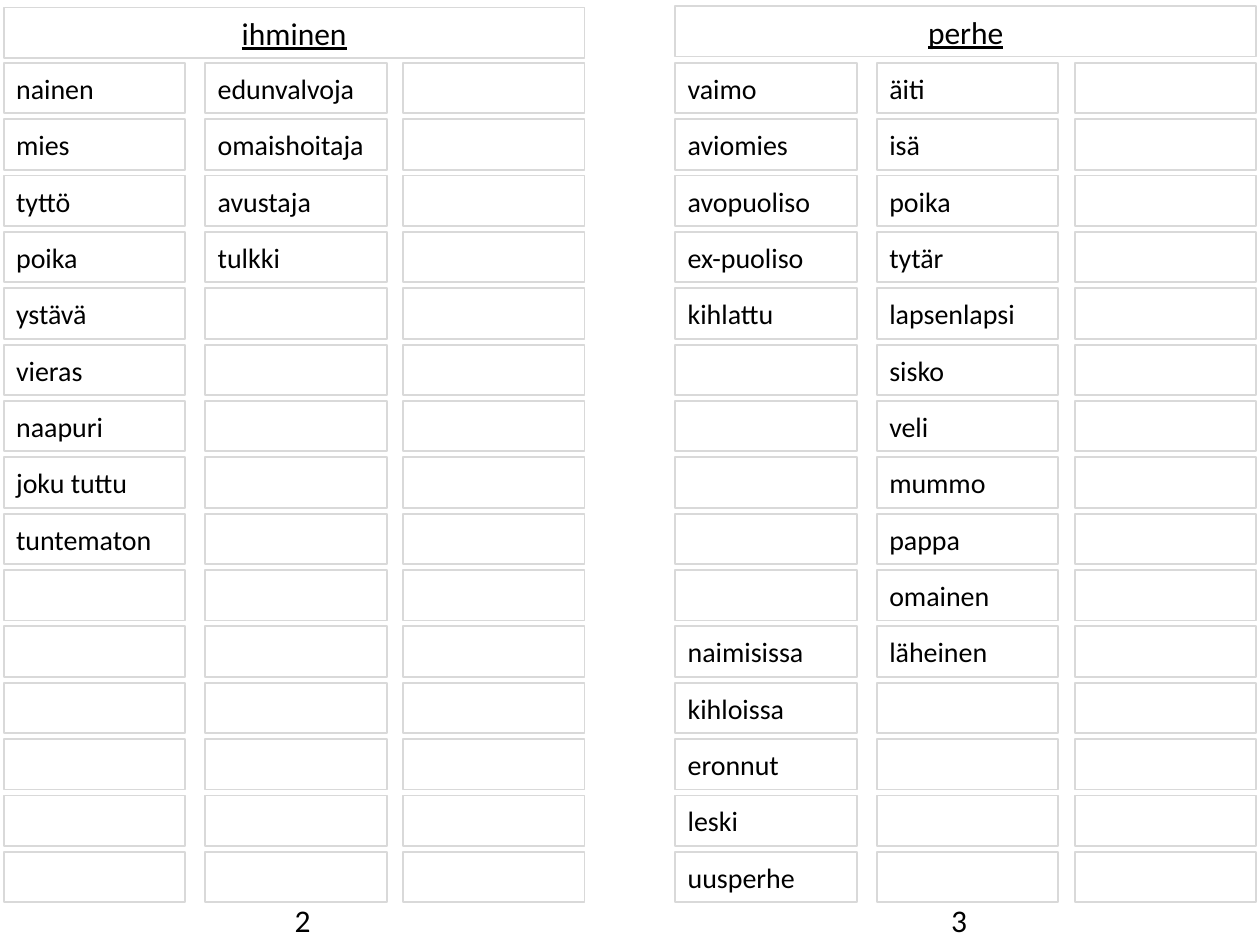
from pptx import Presentation
from pptx import util as u
from pptx.dml.color import RGBColor
from pptx.enum import shapes, text

LISTS = [
    {
        "heading": "ihminen", "page": "2", "left": 0.03, "top": 0.06,
        "page_left": 2.24, "page_width": 0.34,
        "columns": [
            ["nainen", "mies", "tyttö", "poika", "ystävä", "vieras",
             "naapuri", "joku tuttu", "tuntematon"],
            ["edunvalvoja", "omaishoitaja", "avustaja", "tulkki"],
            [],
        ],
    },
    {
        "heading": "perhe", "page": "3", "left": 5.36, "top": 0.05,
        "page_left": 7.45, "page_width": 0.43,
        "columns": [
            ["vaimo", "aviomies", "avopuoliso", "ex-puoliso", "kihlattu",
             "", "", "", "", "",
             "naimisissa", "kihloissa", "eronnut", "leski", "uusperhe"],
            ["äiti", "isä", "poika", "tytär", "lapsenlapsi", "sisko", "veli",
             "mummo", "pappa", "omainen", "läheinen"],
            [],
        ],
    },
]

THEME = {
    "font": "Calibri",
    "ink": RGBColor(0x00, 0x00, 0x00),
    "border": RGBColor(0xD9, 0xD9, 0xD9),
    "border_width": u.Pt(1),
    "heading_size": u.Pt(18),
    "word_size": u.Pt(16),
}

SLIDE_WIDTH, SLIDE_HEIGHT = 10, 7.5
ROWS = 15
COLUMN_OFFSETS = (0, 1.6, 3.17)
CELL_WIDTH, CELL_HEIGHT = 1.44, 0.4
LIST_WIDTH = COLUMN_OFFSETS[-1] + CELL_WIDTH
FIRST_ROW, LAST_ROW = 0.5, 6.76
ROW_STEP = (LAST_ROW - FIRST_ROW) / (ROWS - 1)
PAGE_TOP = SLIDE_HEIGHT - CELL_HEIGHT


def write(frame, wording, align=text.PP_ALIGN.LEFT, **font_format):
    frame.word_wrap = True
    paragraph = frame.paragraphs[0]
    paragraph.alignment = align
    run = paragraph.add_run()
    run.text = wording
    run.font.color.rgb = THEME["ink"]
    for attribute, value in {"name": THEME["font"], **font_format}.items():
        setattr(run.font, attribute, value)


def add_cell(slide, left, top, width, wording="", **text_format):
    """Add an outlined, unfilled box, with its word if it has one."""
    cell = slide.shapes.add_shape(
        shapes.MSO_SHAPE.RECTANGLE,
        *map(u.Inches, (left, top, width, CELL_HEIGHT)))
    cell.shadow.inherit = False
    cell.fill.background()
    cell.line.color.rgb = THEME["border"]
    cell.line.width = THEME["border_width"]
    if wording:
        cell.text_frame.vertical_anchor = text.MSO_ANCHOR.MIDDLE
        write(cell.text_frame, wording, **text_format)


def add_page_number(slide, word_list):
    number = slide.shapes.add_textbox(*map(u.Inches, (
        word_list["page_left"], PAGE_TOP, word_list["page_width"], CELL_HEIGHT)))
    write(number.text_frame, word_list["page"], size=THEME["heading_size"])


def add_word_list(slide, word_list):
    add_cell(slide, word_list["left"], word_list["top"], LIST_WIDTH,
             word_list["heading"], align=text.PP_ALIGN.CENTER,
             size=THEME["heading_size"], underline=True)
    for offset, words in zip(COLUMN_OFFSETS, word_list["columns"]):
        for row in range(ROWS):
            add_cell(slide, word_list["left"] + offset,
                     FIRST_ROW + row * ROW_STEP, CELL_WIDTH,
                     words[row] if row < len(words) else "",
                     size=THEME["word_size"])


def main():
    deck = Presentation()
    deck.slide_width = u.Inches(SLIDE_WIDTH)
    deck.slide_height = u.Inches(SLIDE_HEIGHT)
    slide = deck.slides.add_slide(deck.slide_layouts[6])
    for word_list in LISTS:
        add_page_number(slide, word_list)
        add_word_list(slide, word_list)
    deck.save("out.pptx")


if __name__ == "__main__":
    main()
